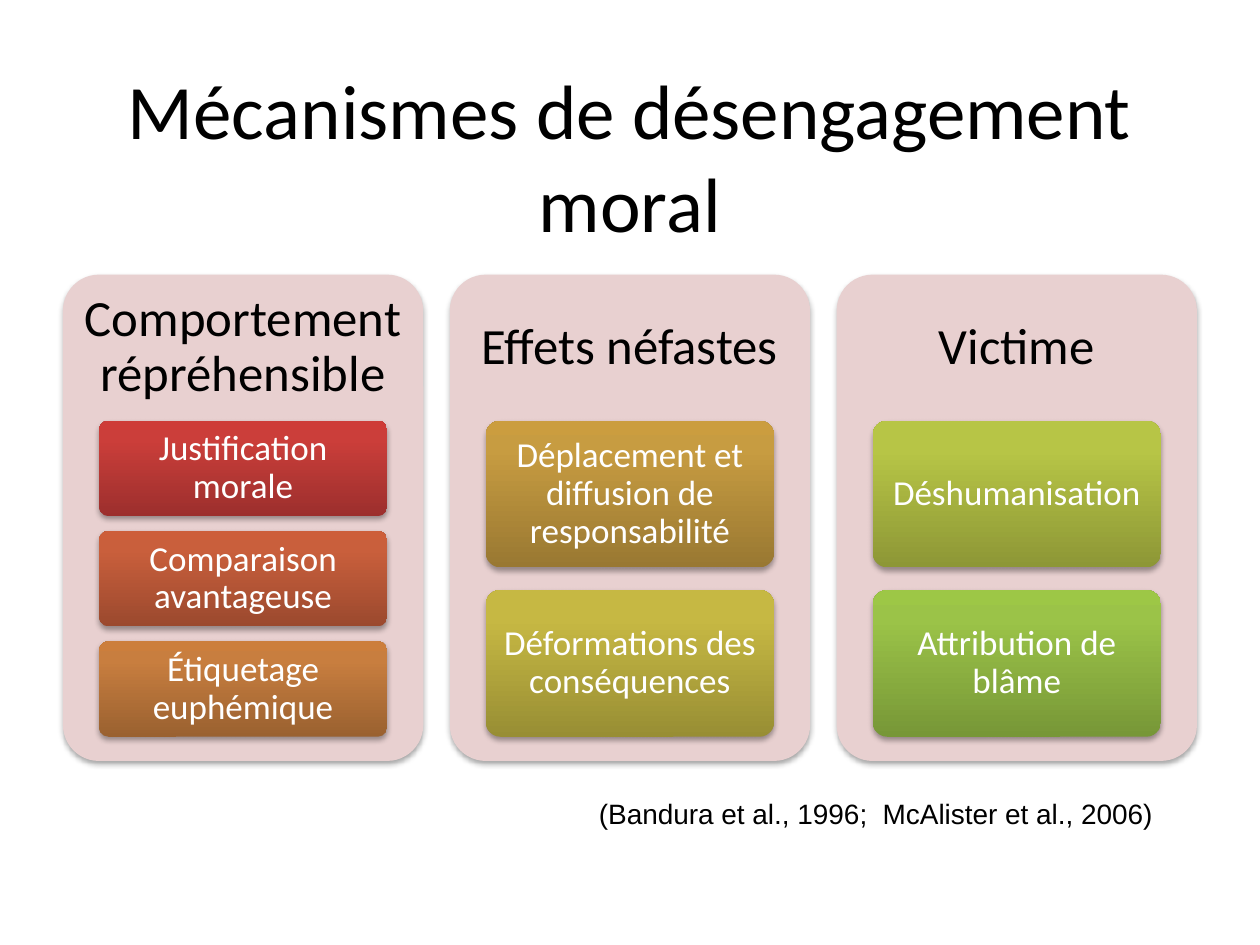
from lxml.etree import SubElement
from pptx import Presentation
from pptx.dml.color import RGBColor
from pptx.enum.shapes import MSO_SHAPE
from pptx.enum.text import MSO_ANCHOR, PP_ALIGN
from pptx.oxml.ns import qn
from pptx.util import Inches, Pt

COLORS = {"black": "000000", "white": "FFFFFF", "card": "E8D0D0"}

# Each item: label, then gradient colours from bottom to top
COLUMNS = [
    ("Comportement répréhensible", [
        ("Justification morale", ("9C2F2D", "CB3E3A", "CE3B37")),
        ("Comparaison avantageuse", ("9B492E", "C95F3C", "CD5E3A")),
        ("Étiquetage euphémique", ("9A6130", "C87E3F", "CC7E3C")),
    ]),
    ("Effets néfastes", [
        ("Déplacement et diffusion de responsabilité", ("997832", "C79C41", "CB9D3F")),
        ("Déformations des conséquences", ("988E34", "C6B843", "C9BB41")),
    ]),
    ("Victime", [
        ("Déshumanisation", ("8D9736", "B7C546", "B9C844")),
        ("Attribution de blâme", ("779737", "9BC348", "9DC746")),
    ]),
]
GRADIENT_STOPS = (0, 80, 100)

# Grid, in inches
LEFT, TOP, CARD_WIDTH, CARD_HEIGHT, PITCH = 0.5, 2.18, 2.86, 3.86, 3.07
HEADING_HEIGHT = 0.3 * CARD_HEIGHT
ITEM_WIDTH = 0.8 * CARD_WIDTH
ITEMS_HEIGHT = 0.65 * CARD_HEIGHT
GAP_RATIO = 2 / 13  # gap between items as a share of an item's height


def add_rounded(left, top, width, height):
    shape = page.shapes.add_shape(MSO_SHAPE.ROUNDED_RECTANGLE, Inches(left),
                                  Inches(top), Inches(width), Inches(height))
    shape.adjustments[0] = 0.1
    shape.line.fill.background()
    shape.shadow.inherit = False
    effects = shape._element.spPr.find(qn("a:effectLst"))
    shadow = SubElement(effects, qn("a:outerShdw"), blurRad="40000",
                        dist="23000", dir="5400000", rotWithShape="0")
    color = SubElement(shadow, qn("a:srgbClr"), val=COLORS["black"])
    SubElement(color, qn("a:alpha"), val="35000")
    return shape


def write(box, text, size, color, margins, font="Calibri", spacing=None,
          align=PP_ALIGN.CENTER, anchor=MSO_ANCHOR.MIDDLE):
    frame = box.text_frame
    frame.text = text
    frame.word_wrap = True
    frame.vertical_anchor = anchor
    side, top, bottom = margins
    frame.margin_left = frame.margin_right = Inches(side)
    frame.margin_top, frame.margin_bottom = Inches(top), Inches(bottom)
    para = frame.paragraphs[0]
    para.alignment = align
    para.line_spacing = spacing
    span = para.runs[0]
    span.font.name = font
    span.font.size = Pt(size)
    span.font.color.rgb = RGBColor.from_string(COLORS[color])


deck = Presentation()
deck.slide_width, deck.slide_height = Inches(10), Inches(7.5)
page = deck.slides.add_slide(deck.slide_layouts[6])

# Title
title = page.shapes.add_textbox(Inches(0.5), Inches(0.3), Inches(9), Inches(1.09))
write(title, "Mécanismes de désengagement moral", 44, "black", (0.1, 0.2, 0.05),
      anchor=MSO_ANCHOR.TOP)

# Source
source = page.shapes.add_textbox(Inches(3.9), Inches(6.27), Inches(5.35), Inches(0.37))
write(source, "(Bandura et al., 1996;  McAlister et al., 2006)", 16, "black",
      (0.1, 0.05, 0.05), font="Arial", align=PP_ALIGN.RIGHT, anchor=MSO_ANCHOR.TOP)

# Columns
for column, (heading, items) in enumerate(COLUMNS):
    left = LEFT + column * PITCH
    card = add_rounded(left, TOP, CARD_WIDTH, CARD_HEIGHT)
    card.fill.solid()
    card.fill.fore_color.rgb = RGBColor.from_string(COLORS["card"])

    heading_box = page.shapes.add_textbox(Inches(left), Inches(TOP),
                                          Inches(CARD_WIDTH), Inches(HEADING_HEIGHT))
    write(heading_box, heading, 29, "black", (0.12, 0.12, 0.12), spacing=0.9)

    # Items share the space under the heading
    item_height = ITEMS_HEIGHT / (len(items) + (len(items) - 1) * GAP_RATIO)
    for row, (label, shades) in enumerate(items):
        item = add_rounded(left + (CARD_WIDTH - ITEM_WIDTH) / 2,
                           TOP + HEADING_HEIGHT + row * item_height * (1 + GAP_RATIO),
                           ITEM_WIDTH, item_height)
        item.fill.gradient()
        item.fill.gradient_angle = 90
        stops = item._element.spPr.find(".//" + qn("a:gsLst"))
        stops.clear()
        for position, shade in zip(GRADIENT_STOPS, shades):
            stop = SubElement(stops, qn("a:gs"), pos=str(position * 1000))
            SubElement(stop, qn("a:srgbClr"), val=shade)
        write(item, label, 20, "white", (0.06, 0.04, 0.04), spacing=0.9)

deck.save("out.pptx")
